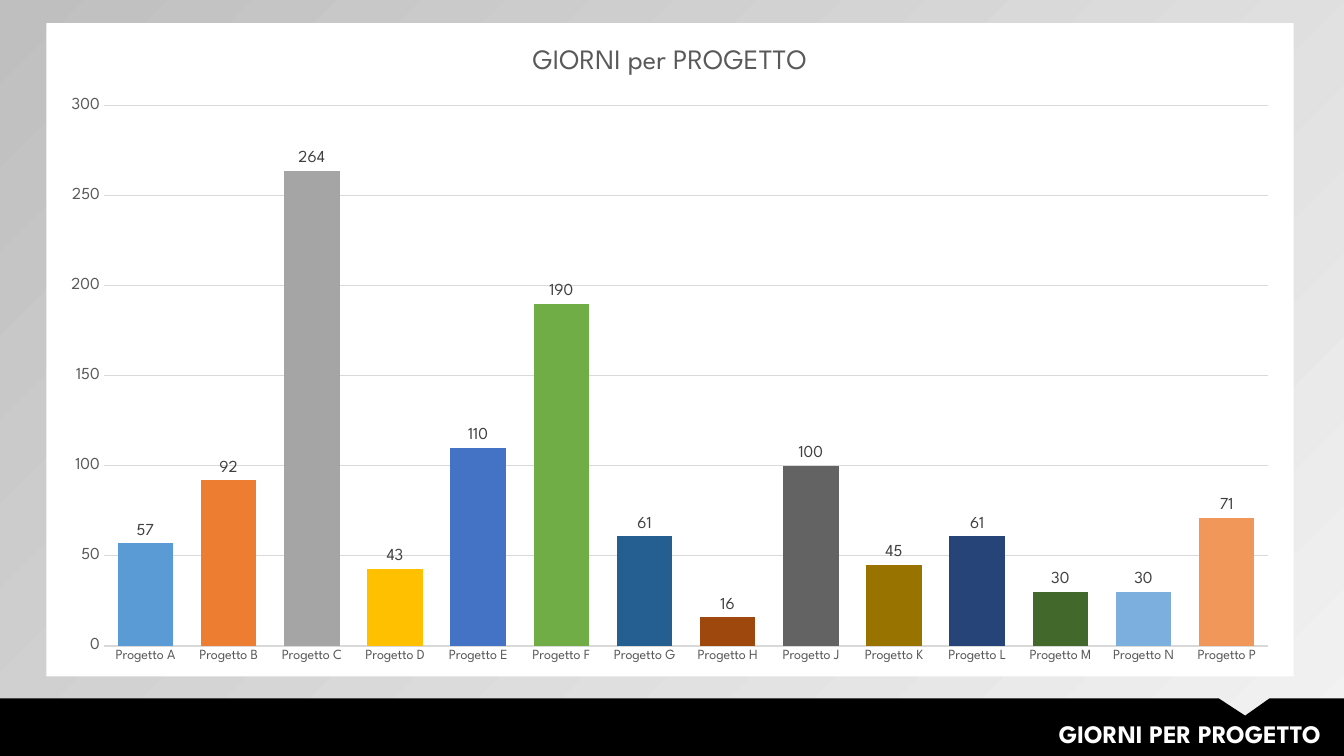
from lxml import etree
from pptx import Presentation
from pptx.chart.data import CategoryChartData
from pptx.dml.color import RGBColor
from pptx.enum.chart import XL_CHART_TYPE, XL_LABEL_POSITION, XL_TICK_MARK
from pptx.enum.text import MSO_AUTO_SIZE, PP_ALIGN
from pptx.oxml.ns import qn
from pptx.util import Inches, Pt

FONT = "League Spartan"
BLACK = RGBColor(0x00, 0x00, 0x00)
WHITE = RGBColor(0xFF, 0xFF, 0xFF)
PALE_GRAY = RGBColor(0xF2, 0xF2, 0xF2)
SILVER = RGBColor(0xBF, 0xBF, 0xBF)
GRID_GRAY = RGBColor(0xD9, 0xD9, 0xD9)
TEXT_GRAY = RGBColor(0x59, 0x59, 0x59)
LABEL_GRAY = RGBColor(0x40, 0x40, 0x40)

PROJECTS = [
    ("A", 57, RGBColor(0x5B, 0x9B, 0xD5)),
    ("B", 92, RGBColor(0xED, 0x7D, 0x31)),
    ("C", 264, RGBColor(0xA5, 0xA5, 0xA5)),
    ("D", 43, RGBColor(0xFF, 0xC0, 0x00)),
    ("E", 110, RGBColor(0x44, 0x72, 0xC4)),
    ("F", 190, RGBColor(0x70, 0xAD, 0x47)),
    ("G", 61, RGBColor(0x25, 0x5E, 0x91)),
    ("H", 16, RGBColor(0x9E, 0x48, 0x0E)),
    ("J", 100, RGBColor(0x63, 0x63, 0x63)),
    ("K", 45, RGBColor(0x99, 0x73, 0x00)),
    ("L", 61, RGBColor(0x26, 0x44, 0x78)),
    ("M", 30, RGBColor(0x43, 0x68, 0x2B)),
    ("N", 30, RGBColor(0x7C, 0xAF, 0xDD)),
    ("P", 71, RGBColor(0xF1, 0x97, 0x5A)),
]


class SlideBuilder:
    def __init__(self, slide, font_name):
        self.slide = slide
        self.font_name = font_name

    def style_font(self, font, size, color, bold=False):
        font.name = self.font_name
        font.size = Pt(size)
        font.color.rgb = color
        font.bold = bold

    def background(self, start, end, angle):
        fill = self.slide.background.fill
        fill.gradient()
        fill.gradient_angle = angle
        for stop, color in zip(fill.gradient_stops, (start, end)):
            stop.color.rgb = color

    def polygon(self, points, color):
        corners = [(Inches(x), Inches(y)) for x, y in points]
        builder = self.slide.shapes.build_freeform(*corners[0])
        builder.add_line_segments(corners[1:], close=True)
        shape = builder.convert_to_shape()
        shape.shadow.inherit = False
        shape.fill.solid()
        shape.fill.fore_color.rgb = color
        shape.line.fill.background()

    def right_text(self, text, left, top, width, height):
        box = self.slide.shapes.add_textbox(
            Inches(left), Inches(top), Inches(width), Inches(height))
        frame = box.text_frame
        frame.word_wrap = True
        frame.auto_size = MSO_AUTO_SIZE.SHAPE_TO_FIT_TEXT
        paragraph = frame.paragraphs[0]
        paragraph.text = text
        paragraph.alignment = PP_ALIGN.RIGHT
        self.style_font(paragraph.font, 18, WHITE, bold=True)

    def column_chart(self, title, projects, frame, plot_frame):
        data = CategoryChartData()
        data.categories = [f"Progetto {letter}" for letter, _, _ in projects]
        data.add_series("Giorni", [days for _, days, _ in projects])
        chart = self.slide.shapes.add_chart(
            XL_CHART_TYPE.COLUMN_CLUSTERED,
            *[Inches(length) for length in frame], data).chart
        self.style_font(chart.font, 10, BLACK)
        chart.has_legend = False
        chart.has_title = True
        title_paragraph = chart.chart_title.text_frame.paragraphs[0]
        title_paragraph.text = title
        self.style_font(title_paragraph.font, 20, TEXT_GRAY)

        plot = chart.plots[0]
        plot.gap_width = 50
        plot.vary_by_categories = False
        plot.has_data_labels = True
        labels = plot.data_labels
        labels.show_value = True
        labels.position = XL_LABEL_POSITION.OUTSIDE_END
        self.style_font(labels.font, 12, LABEL_GRAY)
        for index, (_, _, color) in enumerate(projects):
            fill = plot.series[0].points[index].format.fill
            fill.solid()
            fill.fore_color.rgb = color

        self.axis(chart.category_axis, 10)
        chart.category_axis.format.line.color.rgb = GRID_GRAY
        chart.category_axis.format.line.width = Pt(0.75)
        value_axis = chart.value_axis
        self.axis(value_axis, 12)
        value_axis.format.line.fill.background()
        value_axis.minimum_scale = 0
        value_axis.maximum_scale = 300
        value_axis.major_unit = 50
        value_axis.has_major_gridlines = True
        value_axis.major_gridlines.format.line.color.rgb = GRID_GRAY
        value_axis.major_gridlines.format.line.width = Pt(0.75)
        self.chart_fill(chart, WHITE)
        self.plot_layout(chart, frame, plot_frame)

    def axis(self, axis, size):
        axis.major_tick_mark = XL_TICK_MARK.NONE
        axis.minor_tick_mark = XL_TICK_MARK.NONE
        self.style_font(axis.tick_labels.font, size, TEXT_GRAY)

    def chart_fill(self, chart, color):
        properties = etree.Element(qn("c:spPr"))
        fill = etree.SubElement(properties, qn("a:solidFill"))
        etree.SubElement(fill, qn("a:srgbClr"), val=str(color))
        line = etree.SubElement(properties, qn("a:ln"))
        etree.SubElement(line, qn("a:noFill"))
        chart.element.find(qn("c:chart")).addnext(properties)

    def plot_layout(self, chart, frame, plot_frame):
        left, top, width, height = frame
        plot_left, plot_top, plot_width, plot_height = plot_frame
        plot_area = chart.element.find(qn("c:chart")).find(qn("c:plotArea"))
        for old_layout in plot_area.findall(qn("c:layout")):
            plot_area.remove(old_layout)
        layout = etree.Element(qn("c:layout"))
        manual = etree.SubElement(layout, qn("c:manualLayout"))
        settings = [
            ("layoutTarget", "inner"), ("xMode", "edge"), ("yMode", "edge"),
            ("x", (plot_left - left) / width),
            ("y", (plot_top - top) / height),
            ("w", plot_width / width), ("h", plot_height / height),
        ]
        for name, value in settings:
            etree.SubElement(manual, qn(f"c:{name}"), val=str(value))
        plot_area.insert(0, layout)


def main():
    presentation = Presentation()
    presentation.slide_width = Inches(13.33)
    presentation.slide_height = Inches(7.5)
    slide = presentation.slides.add_slide(presentation.slide_layouts[6])
    builder = SlideBuilder(slide, FONT)
    builder.background(PALE_GRAY, SILVER, 135)
    builder.polygon(
        [(0, 6.93), (12.09, 6.93), (12.35, 7.1), (12.59, 6.93),
         (13.33, 6.93), (13.33, 7.5), (0, 7.5)], BLACK)
    builder.right_text("GIORNI PER PROGETTO", 4.14, 7.08, 9.06, 0.4)
    builder.column_chart(
        "GIORNI per PROGETTO", PROJECTS,
        (0.46, 0.23, 12.37, 6.48), (1.03, 1.05, 11.55, 5.36))
    presentation.save("out.pptx")


if __name__ == "__main__":
    main()
